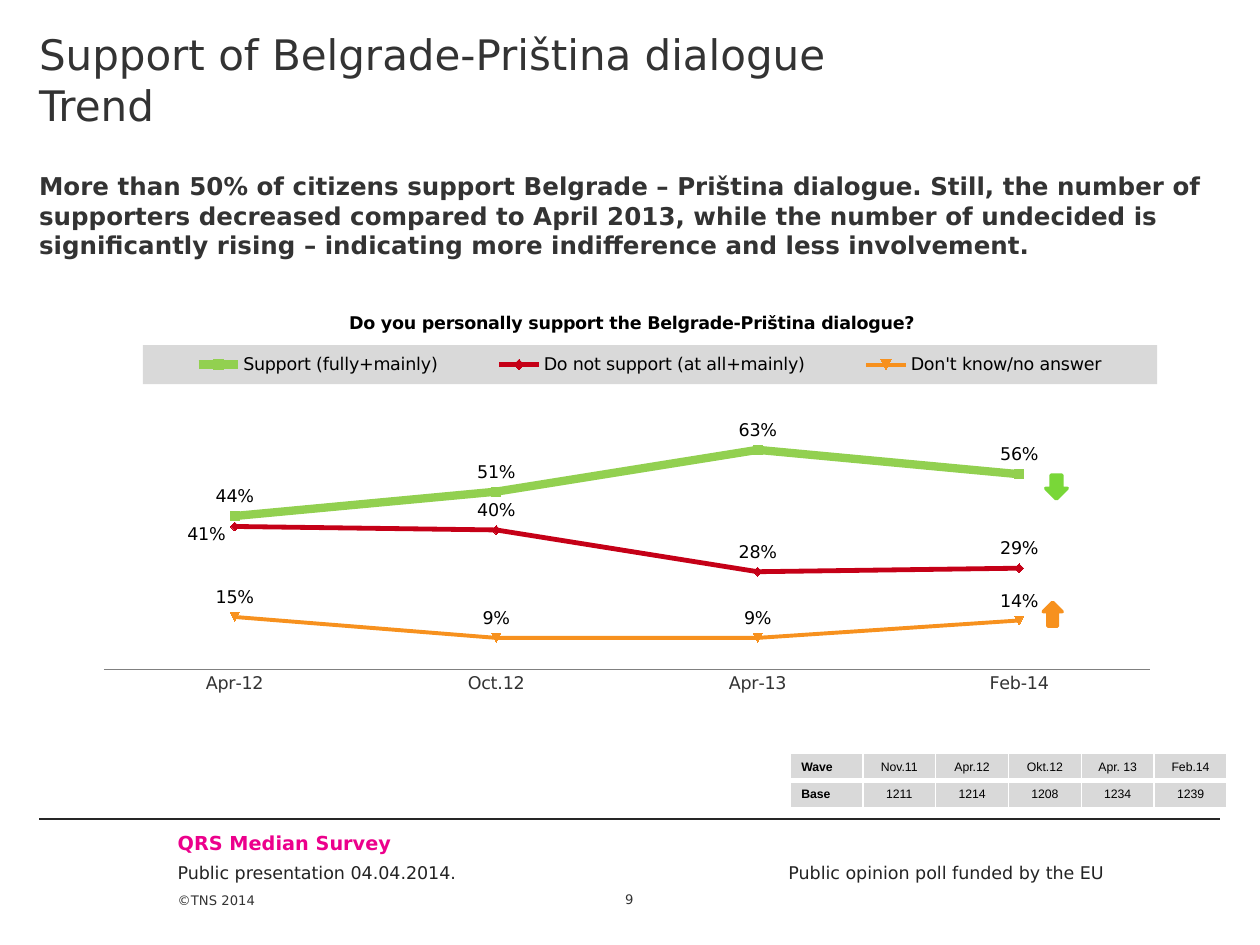
"""Build the poll trend slide on support for the Belgrade-Priština dialogue."""
from dataclasses import dataclass

from lxml import etree
from pptx import Presentation
from pptx.chart.data import CategoryChartData
from pptx.dml.color import RGBColor
from pptx.enum.chart import XL_CHART_TYPE, XL_LABEL_POSITION, XL_LEGEND_POSITION, XL_TICK_MARK
from pptx.enum.shapes import MSO_CONNECTOR, MSO_SHAPE
from pptx.enum.text import MSO_ANCHOR, MSO_AUTO_SIZE, PP_ALIGN
from pptx.oxml import parse_xml
from pptx.oxml.ns import nsdecls, qn
from pptx.util import Inches, Pt

LEFT, CENTER, RIGHT = PP_ALIGN.LEFT, PP_ALIGN.CENTER, PP_ALIGN.RIGHT
TOP, MIDDLE, BOTTOM = MSO_ANCHOR.TOP, MSO_ANCHOR.MIDDLE, MSO_ANCHOR.BOTTOM


@dataclass(frozen=True)
class Theme:
    font: str = "DejaVu Sans"
    table_font: str = "Arial"
    text: str = "333333"
    footer: str = "232323"
    rule: str = "262626"
    axis: str = "808080"
    black: str = "000000"
    white: str = "FFFFFF"
    panel: str = "D9D9D9"
    brand: str = "EC008C"
    support: str = "92D050"
    oppose: str = "C50017"
    undecided: str = "F7911E"
    fall: str = "79D738"
    title_size: float = 24
    body_size: float = 14
    brand_size: float = 11
    label_size: float = 10
    small_size: float = 7.5
    table_size: float = 7


THEME = Theme()

TITLE = "Support of Belgrade-Priština dialogue \vTrend"
MESSAGE = (
    "More than 50% of citizens support Belgrade – Priština dialogue. Still, the number of "
    "supporters decreased compared to April 2013, while the number of undecided is "
    "significantly rising – indicating more indifference and less involvement."
)
QUESTION = "Do you personally support the Belgrade-Priština dialogue?"
WAVES = ["Apr-12", "Oct.12", "Apr-13", "Feb-14"]
ANSWERS = [
    ("Support (fully+mainly)", [44, 51, 63, 56], THEME.support, 4.75),
    ("Do not support (at all+mainly)", [41, 40, 28, 29], THEME.oppose, 2.75),
    ("Don't know/no answer", [15, 9, 9, 14], THEME.undecided, 2.25),
]
PERCENT = "0\\%"
ARROWS = [
    (MSO_SHAPE.DOWN_ARROW, (8.3, 3.77, 0.17, 0.19), THEME.fall),
    (MSO_SHAPE.UP_ARROW, (8.28, 4.78, 0.15, 0.19), THEME.undecided),
]
BASES = [
    ["Wave", "Nov.11", "Apr.12", "Okt.12", "Apr. 13", "Feb.14"],
    ["Base", "1211", "1214", "1208", "1234", "1239"],
]
FOOTER = [
    ("QRS Median Survey", (1.41, 6.6, 3.31, 0.19), THEME.brand_size, THEME.brand, True, LEFT, TOP),
    ("Public presentation 04.04.2014.", (1.41, 6.84, 3.4, 0.17),
     THEME.label_size, THEME.footer, False, LEFT, TOP),
    ("Public opinion poll funded by the EU", (5.36, 6.84, 3.4, 0.17),
     THEME.label_size, THEME.footer, False, RIGHT, TOP),
    ("©TNS 2014", (1.41, 6.92, 0.83, 0.29), THEME.small_size, THEME.text, False, LEFT, BOTTOM),
    ("9", (4.72, 6.92, 0.55, 0.28), THEME.small_size, THEME.text, False, CENTER, BOTTOM),
]


def color(code):
    return RGBColor.from_string(code)


def set_font(font, size, code, bold=False, name=THEME.font):
    font.size, font.bold, font.name = Pt(size), bold, name
    font.color.rgb = color(code)


def set_fill(fill, code):
    fill.solid()
    fill.fore_color.rgb = color(code)


def set_line(line, code, width):
    line.color.rgb = color(code)
    line.width = Pt(width)


def write(shape, text, place, size, code, bold, align, anchor, top_inset=0.0):
    shape.left, shape.top, shape.width, shape.height = map(Inches, place)
    frame = shape.text_frame
    frame.text = text
    frame.word_wrap, frame.auto_size = True, MSO_AUTO_SIZE.NONE
    frame.vertical_anchor = anchor
    frame.margin_left = frame.margin_right = frame.margin_bottom = 0
    frame.margin_top = Inches(top_inset)
    para = frame.paragraphs[0]
    para.alignment, para.space_before = align, Pt(0)
    return para


def add_text(shape, *layout, **options):
    para = write(shape, *layout, **options)
    set_font(para.font, *layout[2:5])


def add_body(shape, *layout, **options):
    para = write(shape, *layout, **options)
    properties = para._p.get_or_add_pPr()
    properties.set("marL", "0")
    properties.set("indent", "0")
    etree.SubElement(properties, qn("a:buNone"))
    set_font(para.font, *layout[2:5])


def manual_layout(edge=True, target="", **values):
    modes = "".join(f'<c:{k}Mode val="edge"/>' for k in "xy" if edge)
    sizes = "".join(f'<c:{k} val="{v}"/>' for k, v in values.items())
    inner = f'<c:layoutTarget val="{target}"/>' if target else ""
    return parse_xml(f'<c:layout {nsdecls("c")}><c:manualLayout>{inner}{modes}{sizes}'
                     "</c:manualLayout></c:layout>")


def place_part(element, layout, after):
    for old in element.findall(qn("c:layout")):
        element.remove(old)
    anchor = element.find(qn(after)) if after else None
    if anchor is None:
        element.insert(0, layout)
    else:
        anchor.addnext(layout)


def add_trend_chart(page):
    data = CategoryChartData(number_format=PERCENT)
    data.categories = WAVES
    for name, values, _, _ in ANSWERS:
        data.add_series(name, values)
    place = map(Inches, (0.31, 2.26, 9.37, 4.24))
    chart = page.shapes.add_chart(XL_CHART_TYPE.LINE_MARKERS, *place, data).chart
    set_font(chart.font, THEME.label_size, THEME.black)

    chart.has_title = True
    title = chart.chart_title
    title.text_frame.text = QUESTION
    set_font(title.text_frame.paragraphs[0].font, THEME.label_size, THEME.black, True)
    place_part(title._element, manual_layout(x=0.26, y=0.045), "c:tx")

    chart.has_legend = True
    legend = chart.legend
    legend.position, legend.include_in_layout = XL_LEGEND_POSITION.LEFT, False
    set_font(legend.font, THEME.label_size, THEME.black)
    place_part(legend._element, manual_layout(x=0.088, y=0.113, w=0.859, h=0.073), "c:legendPos")
    legend._element.find(qn("c:txPr")).addprevious(parse_xml(
        f'<c:spPr {nsdecls("c", "a")}><a:solidFill><a:srgbClr val="{THEME.panel}"/>'
        "</a:solidFill></c:spPr>"))
    plot_layout = manual_layout(target="inner", x=0.055, y=0.068, w=0.886, h=0.652)
    place_part(chart._chartSpace.chart.plotArea, plot_layout, None)

    values = chart.value_axis
    values.minimum_scale, values.maximum_scale = 0, 100
    values.has_major_gridlines, values.visible = False, False
    waves = chart.category_axis
    waves.major_tick_mark = XL_TICK_MARK.NONE
    set_font(waves.tick_labels.font, THEME.label_size, THEME.text)
    set_line(waves.format.line, THEME.axis, 0.75)

    for series, (_, _, code, width) in zip(chart.plots[0].series, ANSWERS):
        series.smooth = False
        set_line(series.format.line, code, width)
        series.marker.size = 5
        set_fill(series.marker.format.fill, code)
        set_line(series.marker.format.line, code, 0.75)
        labels = series.data_labels
        labels.show_value, labels.position = True, XL_LABEL_POSITION.ABOVE
        labels.number_format, labels.number_format_is_linked = PERCENT, False
        set_font(labels.font, THEME.label_size, THEME.black)

    first_oppose = chart.plots[0].series[1].points[0].data_label
    set_font(first_oppose.font, THEME.label_size, THEME.black)
    first_oppose.position = XL_LABEL_POSITION.LEFT
    label = first_oppose._get_or_add_dLbl()
    place_part(label, manual_layout(edge=False, x=0, y=0.015), "c:idx")


def add_base_table(page):
    place = map(Inches, (6.27, 5.98, 3.47, 0.43))
    frame = page.shapes.add_table(len(BASES), len(BASES[0]), *place)
    for r, row in enumerate(BASES):
        for c, text in enumerate(row):
            cell = frame.table.cell(r, c)
            cell.text = text
            cell.vertical_anchor = MIDDLE
            cell.margin_top = cell.margin_bottom = Inches(0.02)
            cell.margin_left = cell.margin_right = Inches(0.09 if c == 0 else 0.03)
            para = cell.text_frame.paragraphs[0]
            para.alignment = LEFT if c == 0 else CENTER
            set_font(para.font, THEME.table_size, THEME.black, c == 0, THEME.table_font)
            properties = cell._tc.get_or_add_tcPr()
            for side in "LRTB":
                wide = (r, side) in ((0, "B"), (1, "T"))
                properties.append(parse_xml(
                    f'<a:ln{side} {nsdecls("a")} w="{Pt(3 if wide else 1)}"><a:solidFill>'
                    f'<a:srgbClr val="{THEME.white}"/></a:solidFill></a:ln{side}>'))
            set_fill(cell.fill, THEME.panel)


def main():
    deck = Presentation()
    deck.slide_width, deck.slide_height = Inches(10), Inches(7.5)
    page = deck.slides.add_slide(deck.slide_layouts[1])
    add_text(page.shapes.title, TITLE, (0.31, 0, 9.37, 1.13), THEME.title_size,
             THEME.text, False, LEFT, TOP, top_inset=0.23)
    add_body(page.placeholders[1], MESSAGE, (0.31, 1.13, 9.37, 0.83), THEME.body_size,
             THEME.text, True, LEFT, TOP, top_inset=0.23)
    add_trend_chart(page)
    for kind, place, code in ARROWS:
        arrow = page.shapes.add_shape(kind, *map(Inches, place))
        arrow.shadow.inherit = False
        set_fill(arrow.fill, code)
        set_line(arrow.line, code, 2)
    add_base_table(page)
    rule = page.shapes.add_connector(MSO_CONNECTOR.STRAIGHT, *map(Inches, (0.31, 6.5, 9.68, 6.5)))
    set_line(rule.line, THEME.rule, 0.75)
    etree.SubElement(rule._element.spPr, qn("a:effectLst"))
    for text, place, *style in FOOTER:
        add_text(page.shapes.add_textbox(0, 0, 0, 0), text, place, *style)
    deck.save("out.pptx")


if __name__ == "__main__":
    main()
